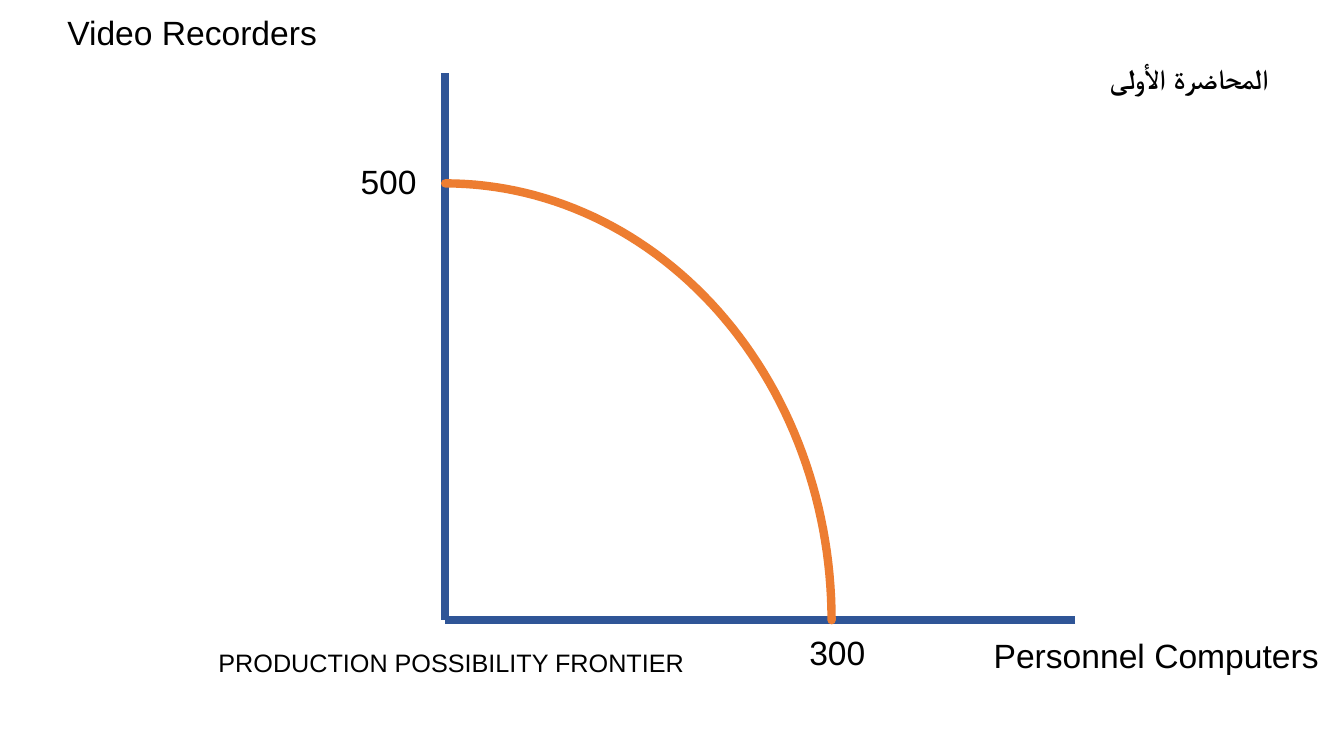
from math import cos, pi, sin

from lxml.etree import SubElement
from pptx import Presentation
from pptx.dml.color import RGBColor
from pptx.enum.shapes import MSO_CONNECTOR as Connector
from pptx.oxml.ns import qn
from pptx.util import Pt

SLIDE_SIZE = (960, 540)
ORIGIN = (318, 443)
AXIS_ENDS = [(318, 52.5), (768, 443)]
FRONTIER_WIDTH, FRONTIER_HEIGHT = 276, 312
FRONTIER_STEPS = 60
STROKE = 6
AXIS_COLOR, FRONTIER_COLOR, TEXT_COLOR = "2F5597", "ED7D31", "000000"

LABELS = [
    ("Video Recorders", dict(box=(41, 5, 205, 36))),
    ("Personnel Computers", dict(box=(702.7, 450, 249, 36), wrap=True)),
    ("500", dict(box=(250.5, 111.6, 55, 36))),
    ("300", dict(box=(571, 447.8, 55, 36))),
    ("PRODUCTION POSSIBILITY FRONTIER",
     dict(box=(149, 458.6, 684, 50), size=18, wrap=True)),
    ("المحاضرة الأولى",
     dict(box=(785.5, 40.3, 135.4, 32), size=20, bold=True, wrap=True)),
]


def color(hex_code):
    return RGBColor.from_string(hex_code)


def add_label(slide, text, box, size=24, bold=False, wrap=False):
    shape = slide.shapes.add_textbox(*map(Pt, box))
    shape.text_frame.word_wrap = wrap
    run = shape.text_frame.paragraphs[0].add_run()
    run.text = text
    run.font.name = "Arial"
    run.font.size = Pt(size)
    run.font.bold = bold
    run.font.color.rgb = color(TEXT_COLOR)


def set_stroke(shape, hex_code):
    shape.line.color.rgb = color(hex_code)
    shape.line.width = Pt(STROKE)


def add_axis(slide, start, end):
    axis = slide.shapes.add_connector(Connector.STRAIGHT, *map(Pt, start + end))
    set_stroke(axis, AXIS_COLOR)
    SubElement(axis._element.spPr, qn("a:effectLst"))


def add_frontier(slide):
    left, bottom = ORIGIN
    angles = [pi / 2 * step / FRONTIER_STEPS for step in range(FRONTIER_STEPS + 1)]
    points = [(Pt(left + FRONTIER_WIDTH * sin(angle)),
               Pt(bottom - FRONTIER_HEIGHT * cos(angle))) for angle in angles]
    builder = slide.shapes.build_freeform(*points[0])
    builder.add_line_segments(points[1:], close=False)
    frontier = builder.convert_to_shape()
    frontier.shadow.inherit = False
    frontier.fill.background()
    set_stroke(frontier, FRONTIER_COLOR)
    line = frontier.line._get_or_add_ln()
    line.set("cap", "rnd")
    SubElement(line, qn("a:round"))


def main():
    presentation = Presentation()
    presentation.slide_width, presentation.slide_height = map(Pt, SLIDE_SIZE)
    slide = presentation.slides.add_slide(presentation.slide_layouts[6])
    for end in AXIS_ENDS:
        add_axis(slide, end, ORIGIN)
    add_frontier(slide)
    for text, options in LABELS:
        add_label(slide, text, **options)
    presentation.save("out.pptx")


if __name__ == "__main__":
    main()
